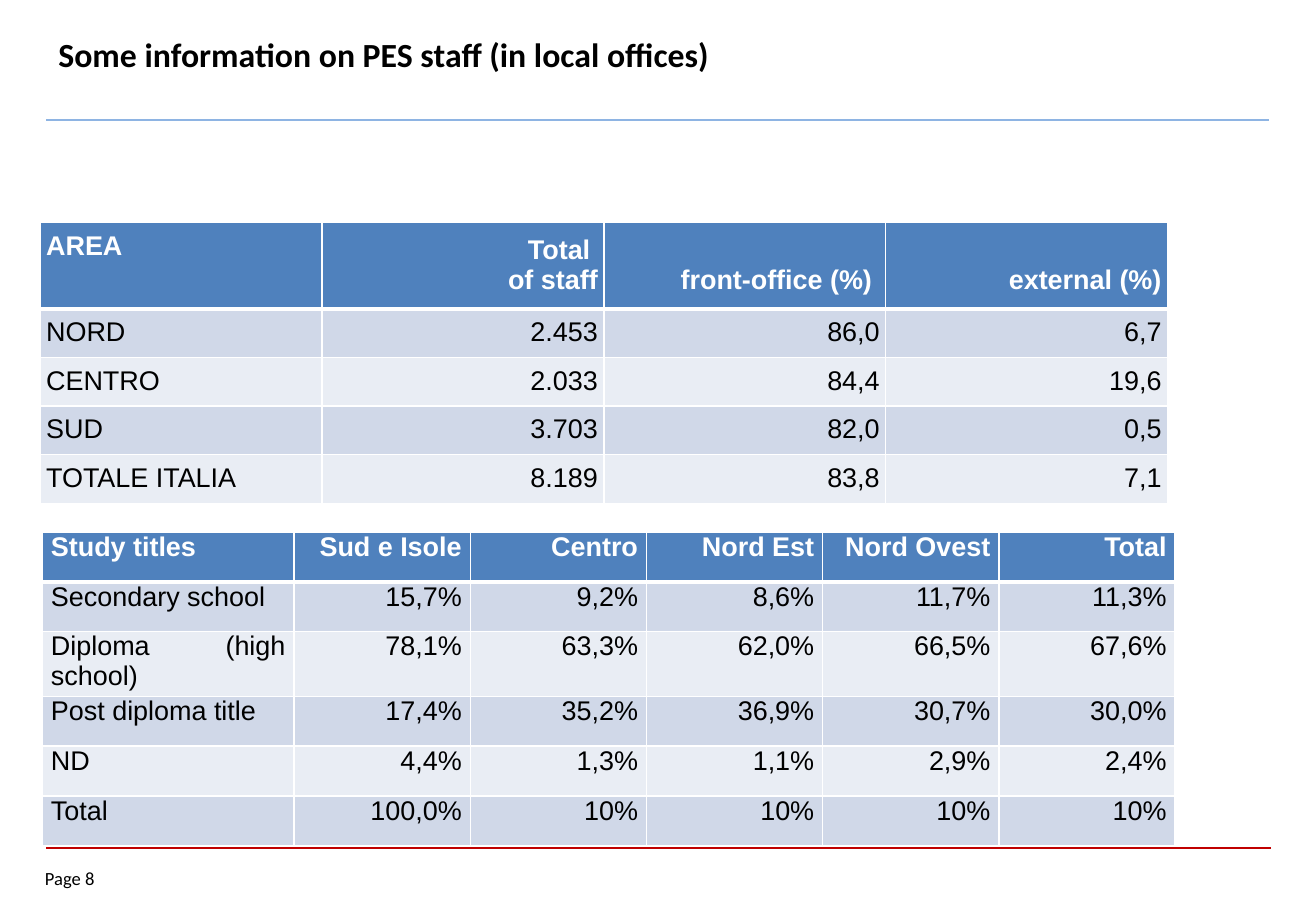
from dataclasses import dataclass

import lxml.etree
import pptx
import pptx.dml.color
import pptx.enum.shapes
import pptx.enum.text
import pptx.oxml.ns
import pptx.util

Inches = pptx.util.Inches
Pt = pptx.util.Pt
ALIGN = pptx.enum.text.PP_ALIGN
ANCHOR = pptx.enum.text.MSO_ANCHOR
qn = pptx.oxml.ns.qn

HEADER, BANDS = "4F81BD", ("D0D8E8", "E9EDF4")
WHITE, BLACK = "FFFFFF", "000000"


@dataclass
class Rule:
    y: float
    right: float
    color: str
    width: float


@dataclass
class TableSpec:
    left: float
    top: float
    cols: list[float]
    header_height: float
    row_height: float
    inset_x: float
    inset_top: float
    inset_bottom: float
    header_inset_bottom: float
    label_align: ALIGN
    header_anchor: ANCHOR
    rows: list[list[str]]


RULES = [Rule(6.98, 10.46, "C00000", 1), Rule(0.99, 10.44, "8EB4E3", 1.5)]

STAFF = TableSpec(
    0.33, 1.83, [2.32] * 4, 0.67, 0.4, 0.05, 0.07, 0.06, 0.11,
    ALIGN.LEFT, ANCHOR.BOTTOM,
    [
        ["AREA", "Total \vof staff", "front-office (%) ", "external (%)"],
        ["NORD", "2.453", "86,0", "6,7"],
        ["CENTRO", "2.033", "84,4", "19,6"],
        ["SUD", "3.703", "82,0", "0,5"],
        ["TOTALE ITALIA", "8.189", "83,8", "7,1"],
    ],
)

STUDY = TableSpec(
    0.35, 4.38, [2.07] + [1.45] * 5, 0.41, 0.41, 0.07, 0, 0, 0,
    ALIGN.JUSTIFY, ANCHOR.TOP,
    [
        ["Study titles", "Sud e Isole", "Centro", "Nord Est", "Nord Ovest", "Total"],
        ["Secondary school", "15,7%", "9,2%", "8,6%", "11,7%", "11,3%"],
        ["Diploma (high school)", "78,1%", "63,3%", "62,0%", "66,5%", "67,6%"],
        ["Post diploma title", "17,4%", "35,2%", "36,9%", "30,7%", "30,0%"],
        ["ND", "4,4%", "1,3%", "1,1%", "2,9%", "2,4%"],
        ["Total", "100,0%", "10%", "10%", "10%", "10%"],
    ],
)


def rgb(color: str) -> pptx.dml.color.RGBColor:
    return pptx.dml.color.RGBColor.from_string(color)


def format_runs(p, font: str, size: float, color: str, bold: bool = False) -> None:
    for r in p.runs:
        r.font.name = font
        r.font.size = Pt(size)
        r.font.bold = bold
        r.font.color.rgb = rgb(color)


def add_rule(s, rule: Rule) -> None:
    y = Inches(rule.y)
    line = s.shapes.add_connector(
        pptx.enum.shapes.MSO_CONNECTOR.STRAIGHT, Inches(0.38), y, Inches(rule.right), y)
    line.line.color.rgb = rgb(rule.color)
    line.line.width = Pt(rule.width)
    lxml.etree.SubElement(line._element.spPr, qn("a:effectLst"))


def add_borders(cell, top: float, bottom: float) -> None:
    tc_pr = cell._tc.get_or_add_tcPr()
    for side, width in (("L", 1), ("R", 1), ("T", top), ("B", bottom)):
        ln = lxml.etree.SubElement(tc_pr, qn(f"a:ln{side}"), w=str(Pt(width)))
        fill = lxml.etree.SubElement(ln, qn("a:solidFill"))
        lxml.etree.SubElement(fill, qn("a:srgbClr"), val=WHITE)


def add_table(s, spec: TableSpec) -> None:
    heights = [spec.header_height] + [spec.row_height] * (len(spec.rows) - 1)
    table = s.shapes.add_table(
        len(heights), len(spec.cols), Inches(spec.left), Inches(spec.top),
        Inches(sum(spec.cols)), Inches(sum(heights))).table
    table.horz_banding = False
    for col, width in zip(table.columns, spec.cols):
        col.width = Inches(width)
    for i, (height, texts) in enumerate(zip(heights, spec.rows)):
        table.rows[i].height = Inches(height)
        is_header = i == 0
        for j, text in enumerate(texts):
            cell = table.cell(i, j)
            add_borders(cell, 3 if i == 1 else 1, 3 if is_header else 1)
            cell.fill.solid()
            cell.fill.fore_color.rgb = rgb(HEADER if is_header else BANDS[(i - 1) % 2])
            cell.margin_left = cell.margin_right = Inches(spec.inset_x)
            cell.margin_top = Inches(spec.inset_top)
            cell.margin_bottom = Inches(
                spec.header_inset_bottom if is_header else spec.inset_bottom)
            cell.vertical_anchor = spec.header_anchor if is_header and j else ANCHOR.TOP
            p = cell.text_frame.paragraphs[0]
            p.text = text
            p.alignment = ALIGN.RIGHT if j else spec.label_align
            format_runs(p, "Arial", 16, WHITE if is_header else BLACK, is_header)


def main() -> None:
    prs = pptx.Presentation()
    prs.slide_width, prs.slide_height = Inches(10.83), Inches(7.5)
    s = prs.slides.add_slide(prs.slide_layouts[5])

    # Title
    title = s.shapes.title
    title.left, title.top = Inches(0.38), Inches(0.09)
    title.width, title.height = Inches(9.92), Inches(0.71)
    tf = title.text_frame
    tf.text = "Some information on PES staff (in local offices)"
    tf.vertical_anchor = ANCHOR.MIDDLE
    tf.paragraphs[0].alignment = ALIGN.LEFT
    format_runs(tf.paragraphs[0], "Calibri", 20, BLACK, True)

    # Rules and page number
    for rule in RULES:
        add_rule(s, rule)
    page = s.shapes.add_textbox(Inches(0.37), Inches(7.14), Inches(0.73), Inches(0.22))
    tf = page.text_frame
    tf.word_wrap = True
    tf.margin_left = tf.margin_top = tf.margin_right = tf.margin_bottom = 0
    tf.text = "Page 8"
    format_runs(tf.paragraphs[0], "Calibri", 11, BLACK)

    # Tables
    for spec in (STAFF, STUDY):
        add_table(s, spec)

    prs.save("out.pptx")


if __name__ == "__main__":
    main()
